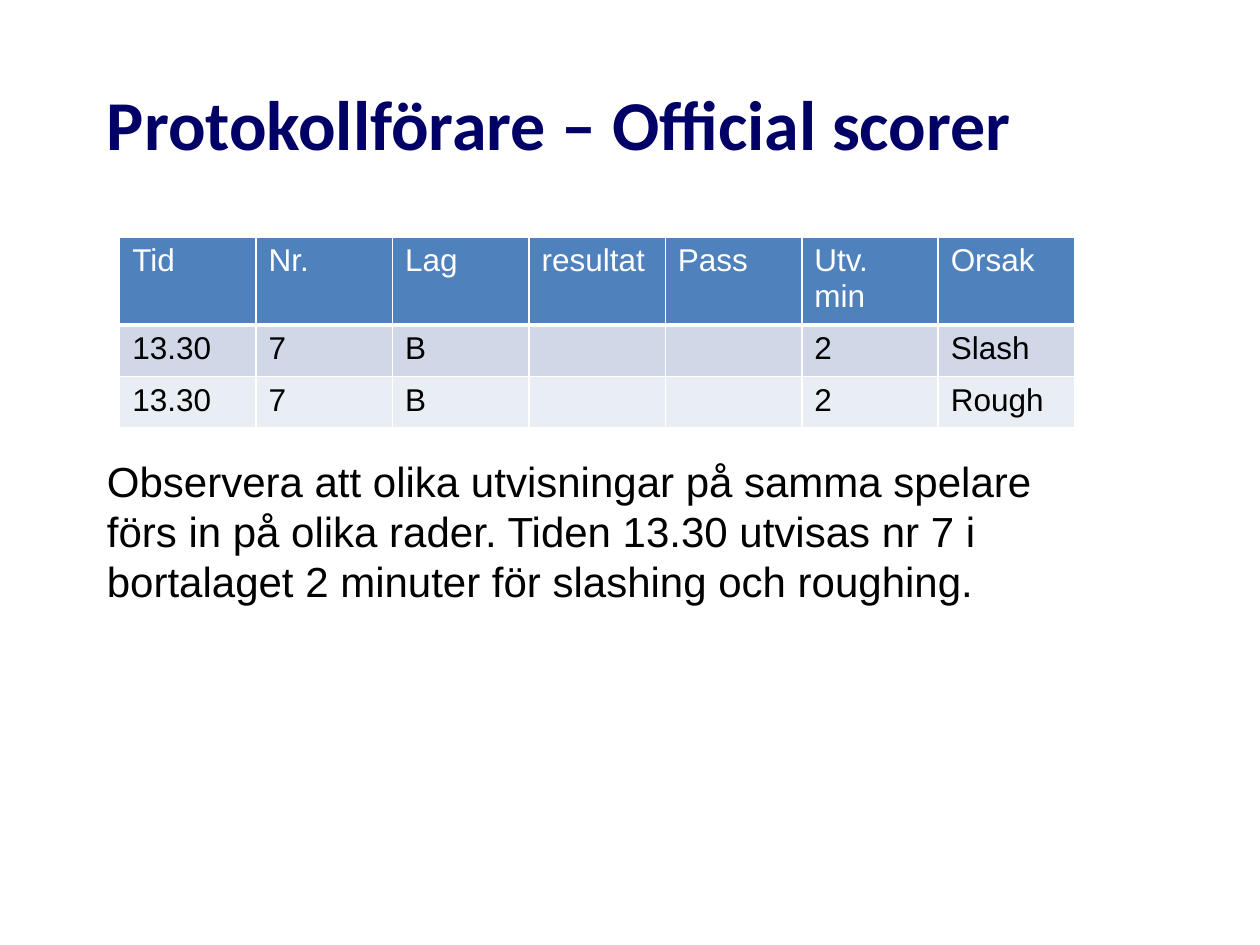
from lxml.etree import SubElement
from pptx import Presentation
from pptx.dml.color import RGBColor
from pptx.oxml.ns import qn
from pptx.util import Inches, Pt

NAVY, BLACK, WHITE = "000066", "000000", "FFFFFF"
ROW_FILLS = ["4F81BD", "D0D8E8", "E9EDF4"]
PENALTIES = [
    ["Tid", "Nr.", "Lag", "resultat", "Pass", "Utv. min", "Orsak"],
    ["13.30", "7", "B", "", "", "2", "Slash"],
    ["13.30", "7", "B", "", "", "2", "Rough"],
]
NOTES = [
    "Observera att olika utvisningar på samma spelare",
    "förs in på olika rader. Tiden 13.30 utvisas nr 7 i "
    "bortalaget 2 minuter för slashing och roughing.",
]


def color(hex_string):
    return RGBColor.from_string(hex_string)


def style(paragraph, name, size, hex_string, bold=False):
    font = paragraph.font
    font.name, font.size, font.bold = name, Pt(size), bold
    font.color.rgb = color(hex_string)


def add_text(slide, box, lines, name, size, hex_string, bold=False, spacing=None):
    frame = slide.shapes.add_textbox(*map(Inches, box)).text_frame
    frame.word_wrap = True
    frame.text = "\n".join(lines)
    for paragraph in frame.paragraphs:
        style(paragraph, name, size, hex_string, bold)
        if spacing:
            paragraph.line_spacing = Pt(spacing)


def add_borders(cell, bottom_width):
    # Borders must come before the cell's fill
    properties = cell._tc.get_or_add_tcPr()
    for index, side in enumerate("LRTB"):
        width = bottom_width if side == "B" else 1
        line = SubElement(properties, qn(f"a:ln{side}"), w=str(Pt(width)))
        fill = SubElement(line, qn("a:solidFill"))
        SubElement(fill, qn("a:srgbClr"), val=WHITE)
        properties.insert(index, line)


def add_penalty_table(slide, box):
    rows, columns = len(PENALTIES), len(PENALTIES[0])
    frame = slide.shapes.add_table(rows, columns, *map(Inches, box))
    for row, values in enumerate(PENALTIES):
        header = row == 0
        for column, value in enumerate(values):
            cell = frame.table.cell(row, column)
            cell.text = value
            cell.fill.solid()
            cell.fill.fore_color.rgb = color(ROW_FILLS[row])
            add_borders(cell, 3 if header else 1)
            style(cell.text_frame.paragraphs[0], "Arial", 18,
                  WHITE if header else BLACK)


def main():
    presentation = Presentation()
    presentation.slide_width, presentation.slide_height = Inches(10), Inches(7.5)
    slide = presentation.slides.add_slide(presentation.slide_layouts[6])

    # Explanation, penalty table and title
    add_text(slide, (0.75, 3.57, 8.48, 2.53), NOTES, "Arial", 24, BLACK, spacing=28.5)
    add_penalty_table(slide, (0.95, 1.88, 7.58, 1.22))
    add_text(slide, (0.75, 0.59, 8.5, 0.74), ["Protokollförare – Official scorer"],
             "Calibri", 40, NAVY, bold=True)

    presentation.save("out.pptx")


if __name__ == "__main__":
    main()
